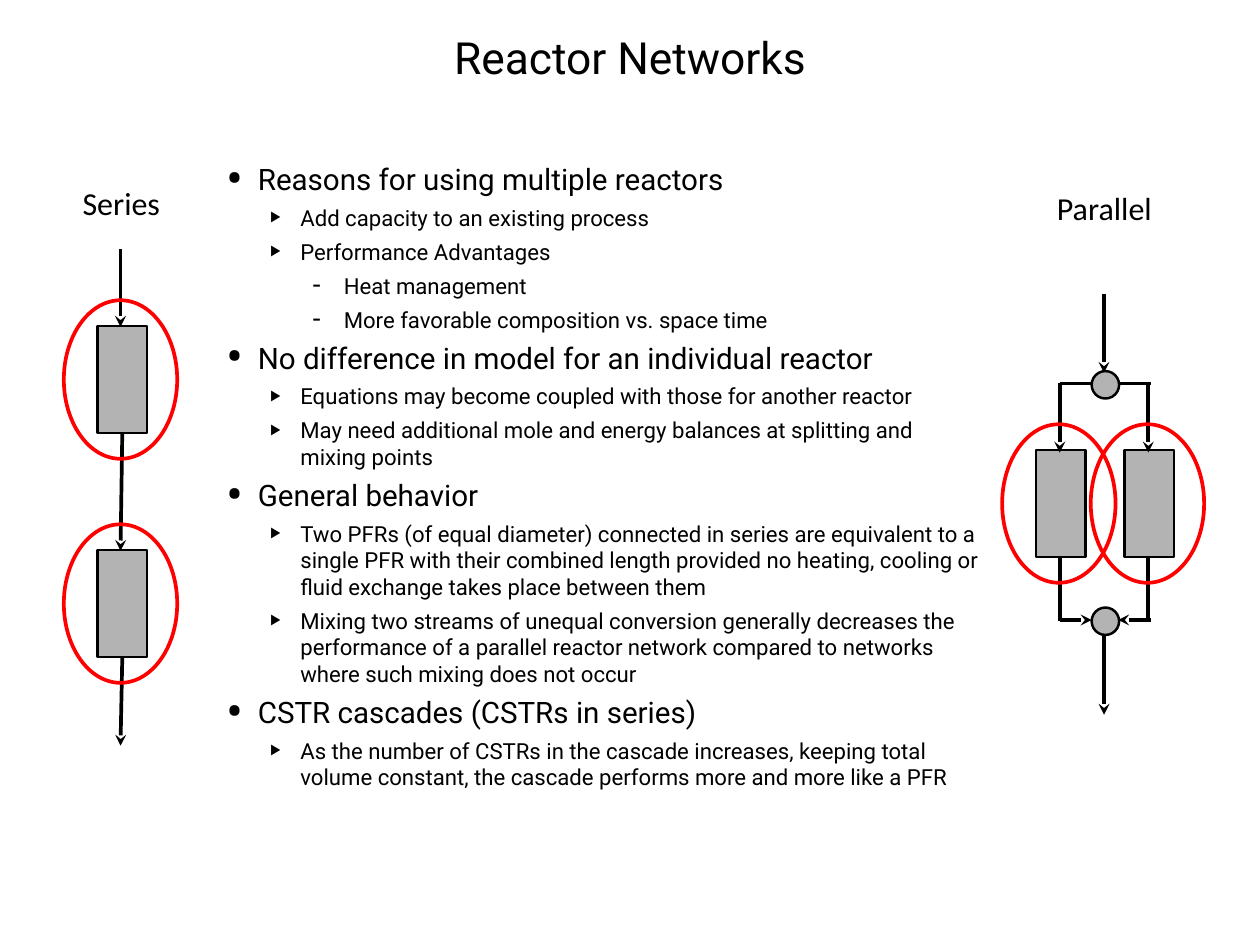
from lxml import etree
from pptx import Presentation
from pptx.dml.color import RGBColor
from pptx.enum.shapes import MSO_CONNECTOR, MSO_SHAPE
from pptx.enum.text import MSO_ANCHOR, PP_ALIGN
from pptx.oxml.ns import qn
from pptx.util import Inches, Pt

RECT, OVAL = MSO_SHAPE.RECTANGLE, MSO_SHAPE.OVAL
LINE = MSO_CONNECTOR.STRAIGHT
TOP, MIDDLE = MSO_ANCHOR.TOP, MSO_ANCHOR.MIDDLE
LEFT, CENTER = PP_ALIGN.LEFT, PP_ALIGN.CENTER

COLORS = {"ink": "000000", "gray": "B3B3B3", "red": "FF0000"}

TITLE = "Reactor Networks"
POINTS = [
    (0, "Reasons for using multiple reactors"),
    (1, "Add capacity to an existing process"),
    (1, "Performance Advantages"),
    (2, "Heat management"),
    (2, "More favorable composition vs. space time"),
    (0, "No difference in model for an individual reactor"),
    (1, "Equations may become coupled with those for another reactor"),
    (1, "May need additional mole and energy balances at splitting and mixing points"),
    (0, "General behavior"),
    (1, "Two PFRs (of equal diameter) connected in series are equivalent to a single PFR "
        "with their combined length provided no heating, cooling or fluid exchange takes "
        "place between them"),
    (1, "Mixing two streams of unequal conversion generally decreases the performance of a "
        "parallel reactor network compared to networks where such mixing does not occur"),
    (0, "CSTR cascades (CSTRs in series)"),
    (1, "As the number of CSTRs in the cascade increases, keeping total volume constant, "
        "the cascade performs more and more like a PFR"),
]
LEVELS = [
    {"size": 24, "left": 0.35, "mark": "•", "scale": 171},
    {"size": 18, "left": 0.83, "mark": "‣", "scale": 100},
    {"size": 18, "left": 1.32, "mark": "-", "scale": 125},
]
HANG = 0.35
LABELS = [("Series", 0.87, 2.02, 1), ("Parallel", 11.88, 2.08, 1.17)]

TANK, RING, NODE = (0.56, 1.21), (1.28, 1.79), (0.31, 0.31)
TANKS = [(1.1, 3.68), (1.1, 6.21), (11.69, 5.08), (12.69, 5.08)]
NODES = [(12.32, 4.19), (12.32, 6.86)]
SHIFT = (-0.38, -0.29)

SERIES = [
    (1.36, 2.81, 1.36, 3.69, True),
    (1.38, 4.9, 1.36, 6.22, True),
    (1.38, 7.43, 1.36, 8.42, True),
]
MAINS = [(12.46, 3.32, 12.46, 4.21, True), (12.46, 7.18, 12.46, 8.07, True)]
SIDES = [(11.96, 11.96, 12.32), (12.96, 12.99, 12.62)]
BRANCH = [
    flow
    for mid, edge, node in SIDES
    for flow in (
        (edge, 4.33, node, 4.33, False),
        (mid, 4.32, mid, 5.11, True),
        (edge, 7, node, 7, True),
        (mid, 7.01, mid, 6.29, False),
    )
]


def color(name):
    return RGBColor.from_string(COLORS[name])


def put(obj, values):
    for name, value in values.items():
        setattr(obj, name, value)


def add_box(slide, place, inset, anchor, wrap):
    frame = slide.shapes.add_textbox(*map(Inches, place)).text_frame
    put(frame, {"word_wrap": wrap, "vertical_anchor": anchor})
    for side in ("left", "top", "right", "bottom"):
        setattr(frame, "margin_" + side, Inches(inset))
    return frame


def write(para, text, size, face, align):
    para.alignment = align
    run = para.add_run()
    run.text = text
    put(run.font, {"size": Pt(size), "name": face})
    run.font.color.rgb = color("ink")


def add_mark(para, level):
    props = para._p.get_or_add_pPr()
    props.set("marL", str(Inches(level["left"])))
    props.set("indent", str(-Inches(HANG)))
    tint = etree.SubElement(props, qn("a:buClr"))
    etree.SubElement(tint, qn("a:srgbClr"), val=COLORS["ink"])
    etree.SubElement(props, qn("a:buSzPct"), val=str(level["scale"] * 1000))
    etree.SubElement(props, qn("a:buFont"), typeface="Roboto")
    etree.SubElement(props, qn("a:buChar"), char=level["mark"])


def add_part(slide, kind, spot, size, fill, edge, width):
    part = slide.shapes.add_shape(kind, *map(Inches, spot + size))
    part.shadow.inherit = False
    if fill:
        part.fill.solid()
        part.fill.fore_color.rgb = color(fill)
    else:
        part.fill.background()
    part.line.color.rgb = color(edge)
    part.line.width = Pt(width)


def add_flow(slide, left, top, right, low, arrow):
    flow = slide.shapes.add_connector(LINE, *map(Inches, (left, top, right, low)))
    flow.line.color.rgb = color("ink")
    flow.line.width = Pt(3)
    props = flow._element.spPr
    if arrow:
        etree.SubElement(props.find(qn("a:ln")), qn("a:tailEnd"), type="stealth")
    etree.SubElement(props, qn("a:effectLst"))


def main():
    deck = Presentation()
    put(deck, {"slide_width": Inches(14.22), "slide_height": Inches(10.67)})
    slide = deck.slides.add_slide(deck.slide_layouts[6])

    frame = add_box(slide, (1.39, 0.28, 11.44, 1.39), 0.06, TOP, True)
    write(frame.paragraphs[0], TITLE, 36, "Roboto", CENTER)

    frame = add_box(slide, (2.5, 1.76, 8.61, 7.99), 0.06, TOP, True)
    for index, (depth, text) in enumerate(POINTS):
        para = frame.add_paragraph() if index else frame.paragraphs[0]
        level = LEVELS[depth]
        put(para, {"level": depth, "space_before": Pt(6)})
        write(para, text, level["size"], "Roboto", LEFT)
        add_mark(para, level)

    for text, left, top, width in LABELS:
        frame = add_box(slide, (left, top, width, 0.53), 0, MIDDLE, False)
        write(frame.paragraphs[0], text, 26, "Calibri", CENTER)

    for spot in TANKS:
        add_part(slide, RECT, spot, TANK, "gray", "ink", 2)
    for flow in SERIES + MAINS:
        add_flow(slide, *flow)
    for spot in NODES:
        add_part(slide, OVAL, spot, NODE, "gray", "ink", 2)
    for flow in BRANCH:
        add_flow(slide, *flow)
    for left, top in TANKS:
        spot = (left + SHIFT[0], top + SHIFT[1])
        add_part(slide, OVAL, spot, RING, None, "red", 3)

    deck.save("out.pptx")


if __name__ == "__main__":
    main()
